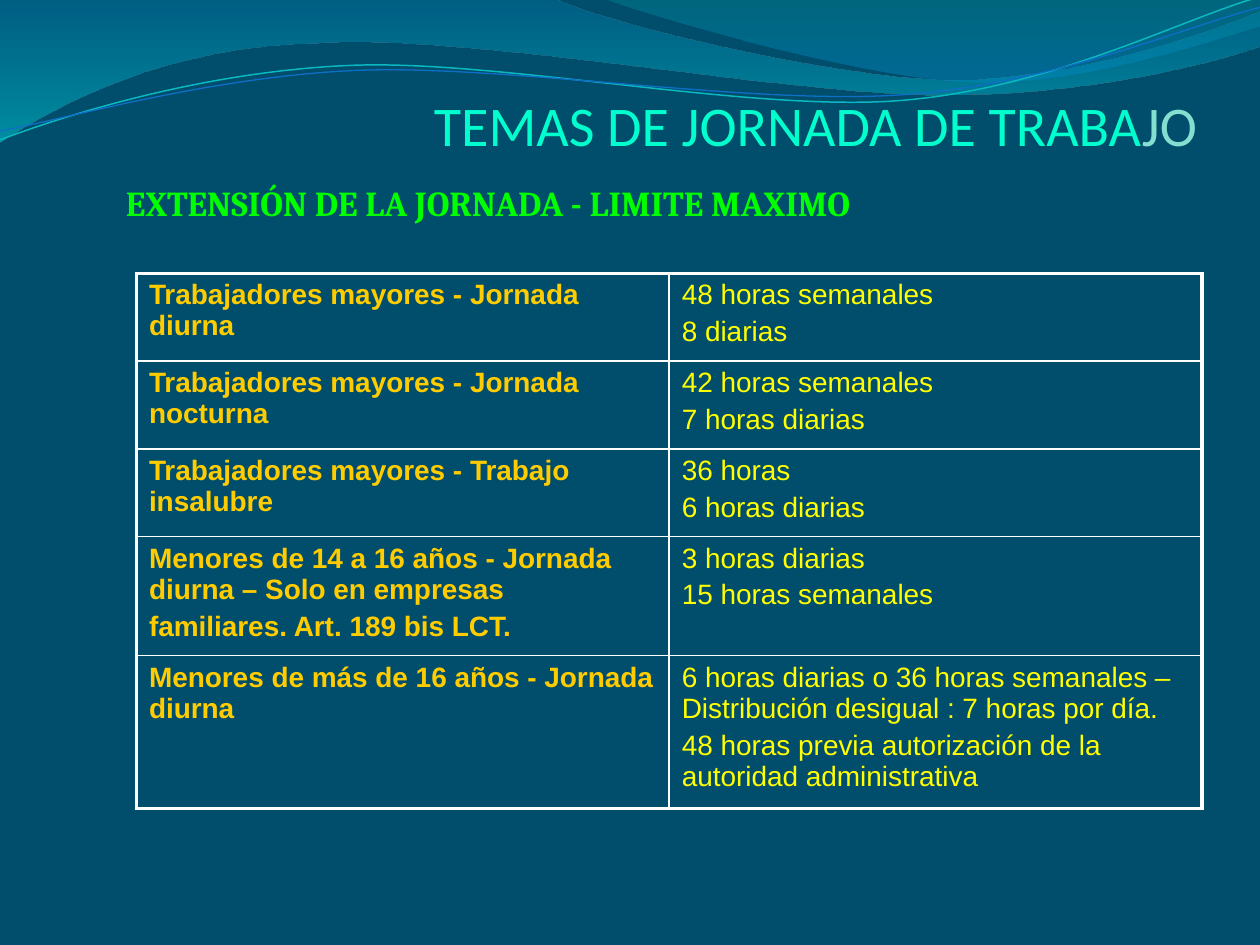
from dataclasses import dataclass

import pptx
import pptx.dml.color
import pptx.enum.text
import pptx.oxml
import pptx.oxml.ns
import pptx.util
from pptx.util import Cm, Pt

WHITE = "FFFFFF"
UNITS_PER_CM = 100
NAMESPACE = pptx.oxml.ns.nsdecls("a")


@dataclass
class GradientStop:
    position: int
    color: str
    opacity: int


@dataclass
class Wave:
    """Outline in cm: a step of one point is a line, of three a Bézier curve."""
    start: tuple
    steps: list
    stops: tuple = ()
    line_color: str = ""
    line_width: float = 0


@dataclass
class TableRow:
    height: float
    worker: list[str]
    limits: list[str]


WAVES = [
    Wave((0, 0), [
        [(11.18, -0.03)],
        [(12.09, 0.43), (16.87, 1.6), (19.25, 1.6)],
        [(21.67, 1.6), (24.33, 0.66), (25.4, 0.23)],
        [(25.43, 0.91)],
        [(24.97, 1.12), (22.1, 1.93), (18.95, 1.91)],
        [(15.8, 1.91), (9.7, 0.71), (6.53, 0.86)],
        [(3.28, 0.91), (1.17, 2.11), (-0.03, 2.87)],
    ], stops=(GradientStop(0, "0074A1", 45), GradientStop(100, "00C6CF", 55))),
    Wave((12.17, -0.03), [
        [(12.93, 0.28), (17.32, 1.57), (19.53, 1.65)],
        [(21.74, 1.75), (24.41, 0.81), (25.4, 0.53)],
        [(25.4, 0)],
    ], stops=(GradientStop(0, "00A1A9", 30), GradientStop(80, "008BBF", 45))),
    Wave((0, 2.82), [
        [(1.22, 2.36), (4.01, 1.45), (7.04, 1.32)],
        [(10.03, 1.19), (15.06, 2.26), (18.11, 2.03)],
        [(21.16, 1.8), (23.83, 0.38), (25.35, -0.05)],
    ], line_color="0AB8BF", line_width=0.85),
    Wave((0, 2.64), [
        [(1.19, 2.44), (4.17, 1.55), (7.19, 1.42)],
        [(10.24, 1.3), (15.16, 2.13), (18.21, 1.91)],
        [(21.23, 1.7), (23.9, 0.53), (25.4, 0.15)],
    ], line_color="0F6FC6", line_width=0.75),
]

ROWS = [
    TableRow(1.77, ["Trabajadores mayores - Jornada diurna"],
             ["48 horas semanales", "8 diarias"]),
    TableRow(1.77, ["Trabajadores mayores - Jornada nocturna"],
             ["42 horas semanales", "7 horas diarias"]),
    TableRow(1.77, ["Trabajadores mayores - Trabajo insalubre"],
             ["36 horas", "6 horas diarias"]),
    TableRow(1.77, ["Menores de 14 a 16 años - Jornada diurna – Solo en empresas",
                    "familiares. Art. 189 bis LCT."],
             ["3 horas diarias", "15 horas semanales"]),
    TableRow(1.93, ["Menores de más de 16 años - Jornada diurna"],
             ["6 horas diarias o 36 horas semanales – "
              "Distribución desigual : 7 horas por día.",
              "48 horas previa autorización de la autoridad administrativa"]),
]


def rgb(color: str) -> pptx.dml.color.RGBColor:
    return pptx.dml.color.RGBColor.from_string(color)


def style_font(font, name: str, size: float, color: str, bold: bool = False) -> None:
    font.name, font.size, font.bold = name, Pt(size), bold
    font.color.rgb = rgb(color)


def set_space_before(paragraph, percent: int) -> None:
    paragraph._p.get_or_add_pPr().append(pptx.oxml.parse_xml(
        f'<a:spcBef {NAMESPACE}><a:spcPct val="{percent * 1000}"/></a:spcBef>'))


def to_units(point: tuple) -> tuple:
    return tuple(round(value * UNITS_PER_CM) for value in point)


def bend_segments(shape, wave: Wave, corners: list[tuple]) -> None:
    """Turn the straight segments of the three-point steps into Bézier curves."""
    left, top = (min(values) for values in zip(*corners))
    segments = list(shape.element.spPr.iter(pptx.oxml.ns.qn("a:lnTo")))
    for segment, step in zip(segments, wave.steps):
        if len(step) == 3:
            points = "".join(f'<a:pt x="{x - left}" y="{y - top}"/>'
                             for x, y in map(to_units, step))
            curve = pptx.oxml.parse_xml(
                f"<a:cubicBezTo {NAMESPACE}>{points}</a:cubicBezTo>")
            segment.getparent().replace(segment, curve)


def draw_wave(slide, wave: Wave) -> None:
    corners = [to_units(point) for point in (wave.start, *(step[-1] for step in wave.steps))]
    builder = slide.shapes.build_freeform(*corners[0], scale=Cm(1) / UNITS_PER_CM)
    builder.add_line_segments(corners[1:], close=bool(wave.stops))
    shape = builder.convert_to_shape()
    bend_segments(shape, wave, corners)
    shape.shadow.inherit = False
    shape.fill.background()
    if not wave.stops:
        shape.line.color.rgb = rgb(wave.line_color)
        shape.line.width = Pt(wave.line_width)
        return
    shape.line.fill.background()
    stops = "".join(
        f'<a:gs pos="{stop.position * 1000}"><a:srgbClr val="{stop.color}">'
        f'<a:alpha val="{stop.opacity * 1000}"/></a:srgbClr></a:gs>' for stop in wave.stops)
    gradient = pptx.oxml.parse_xml(
        f'<a:gradFill {NAMESPACE}><a:gsLst>{stops}</a:gsLst>'
        '<a:lin ang="5400000" scaled="0"/></a:gradFill>')
    properties = shape.element.spPr
    properties.replace(properties.find(pptx.oxml.ns.qn("a:noFill")), gradient)


def add_text_frame(slide, left: float, top: float, width: float, height: float):
    frame = slide.shapes.add_textbox(Cm(left), Cm(top), Cm(width), Cm(height)).text_frame
    frame.word_wrap = True
    return frame


def set_borders(cell, widths: dict[str, float]) -> None:
    properties = cell._tc.get_or_add_tcPr()
    for side, width in widths.items():
        properties.append(pptx.oxml.parse_xml(
            f'<a:ln{side} {NAMESPACE} w="{Pt(width)}"><a:solidFill>'
            f'<a:srgbClr val="{WHITE}"/></a:solidFill></a:ln{side}>'))


def fill_cell(cell, lines: list[str], color: str, bold: bool) -> None:
    cell.fill.background()
    cell.text_frame.text = "\n".join(lines)
    for paragraph in cell.text_frame.paragraphs:
        set_space_before(paragraph, 20)
        style_font(paragraph.font, "Arial", 16, color, bold)


def draw_table(slide, rows: list[TableRow]) -> None:
    height = sum(row.height for row in rows)
    table = slide.shapes.add_table(len(rows), 2, Cm(2.75), Cm(5.51),
                                   Cm(21.48), Cm(height)).table
    table.first_row = table.horz_banding = False
    for row_index, row in enumerate(rows):
        table.rows[row_index].height = Cm(row.height)
        columns = ((row.worker, "FFCC00", True), (row.limits, "FFFF00", False))
        for column_index, (lines, color, bold) in enumerate(columns):
            cell = table.cell(row_index, column_index)
            outer = {"L": column_index == 0, "R": column_index == 1,
                     "T": row_index == 0, "B": row_index == len(rows) - 1}
            set_borders(cell, {side: 2.25 if edge else 1 for side, edge in outer.items()})
            fill_cell(cell, lines, color, bold)


def main() -> None:
    presentation = pptx.Presentation()
    presentation.slide_width, presentation.slide_height = Cm(25.4), Cm(19.05)
    slide = presentation.slides.add_slide(presentation.slide_layouts[6])
    slide.background.fill.solid()
    slide.background.fill.fore_color.rgb = rgb("004D6C")

    # Waves along the top
    for wave in WAVES:
        draw_wave(slide, wave)

    # Title in two colours
    frame = add_text_frame(slide, 1.27, 0.76, 22.86, 2.42)
    frame.margin_left = frame.margin_right = frame.margin_bottom = 0
    frame.vertical_anchor = pptx.enum.text.MSO_ANCHOR.BOTTOM
    paragraph = frame.paragraphs[0]
    paragraph.alignment = pptx.enum.text.PP_ALIGN.RIGHT
    for text, color in (("TEMAS DE JORNADA DE TRABA", "00FFCC"), ("JO", "85DFD0")):
        run = paragraph.add_run()
        run.text = text
        style_font(run.font, "Calibri", 32, color)

    # Subtitle
    paragraph = add_text_frame(slide, 2.29, 3.53, 20.98, 14.4).paragraphs[0]
    paragraph.text = "EXTENSIÓN DE LA JORNADA - LIMITE MAXIMO"
    set_space_before(paragraph, 20)
    style_font(paragraph.font, "Cambria", 20, "00FF00", True)

    # Working-time limits
    draw_table(slide, ROWS)
    presentation.save("out.pptx")


if __name__ == "__main__":
    main()
